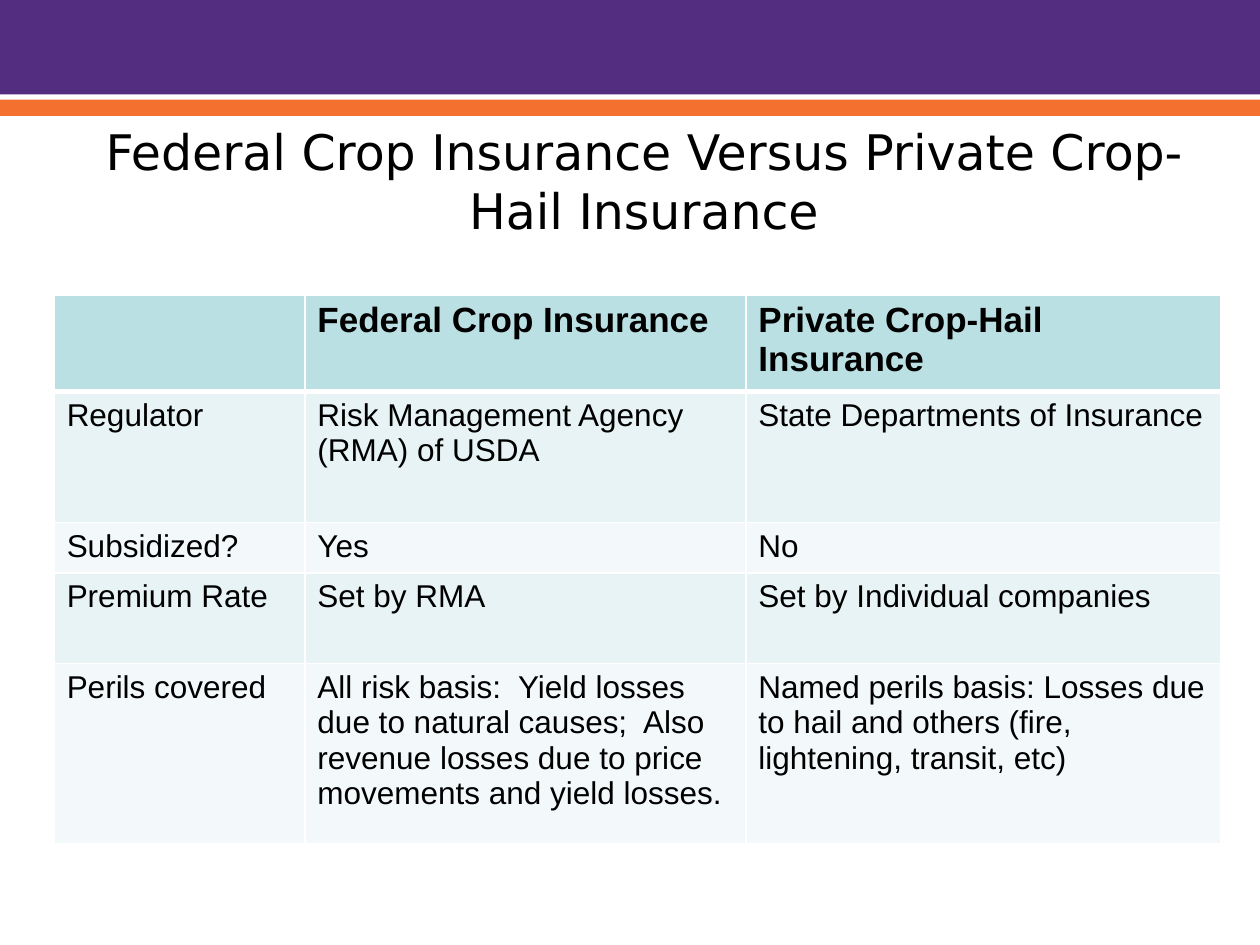
from lxml import etree
from pptx import Presentation
from pptx.dml.color import RGBColor
from pptx.enum.shapes import MSO_SHAPE
from pptx.enum.text import MSO_ANCHOR, PP_ALIGN
from pptx.oxml.ns import qn
from pptx.util import Inches, Pt

TITLE = "Federal Crop Insurance Versus Private Crop-Hail Insurance"
ROWS = [
    ("", "Federal Crop Insurance", "Private Crop-Hail Insurance"),
    ("Regulator", "Risk Management Agency (RMA) of USDA",
     "State Departments of Insurance"),
    ("Subsidized?", "Yes", "No"),
    ("Premium Rate", "Set by RMA", "Set by Individual companies"),
    ("Perils covered",
     "All risk basis:  Yield losses due to natural causes;  Also revenue "
     "losses due to price movements and yield losses.",
     "Named perils basis: Losses due to hail and others (fire, lightening, "
     "transit, etc)"),
]
COL_WIDTHS = [1.99, 3.5, 3.77]
ROW_HEIGHTS = [0.71, 1.04, 0.4, 0.72, 1.43]

THEME = {
    "purple": "522D80", "orange": "F4702F", "text": "000000",
    "header": "BBE0E3", "bands": ("E7F3F4", "F3F9FA"), "rule": "FFFFFF",
    "title_font": "DejaVu Sans", "body_font": "Arial",
    "title_size": 28, "header_size": 20, "body_size": 18,
}
BANNER = [(0, 0.75, THEME["purple"]), (0.79, 0.13, THEME["orange"])]


def add_run(p, text, font, size, bold=False):
    r = p.add_run()
    r.text = text
    r.font.name = font
    r.font.size = Pt(size)
    r.font.bold = bold
    r.font.color.rgb = RGBColor.from_string(THEME["text"])


def add_band(s, top, height, color):
    sp = s.shapes.add_shape(MSO_SHAPE.RECTANGLE, 0, Inches(top),
                            Inches(10), Inches(height))
    sp.shadow.inherit = False
    sp.fill.solid()
    sp.fill.fore_color.rgb = RGBColor.from_string(color)
    sp.line.fill.background()


def add_title(s):
    sp = s.shapes.add_textbox(Inches(0.65), Inches(0.81),
                              Inches(8.92), Inches(1.25))
    tf = sp.text_frame
    tf.word_wrap = True
    tf.vertical_anchor = MSO_ANCHOR.MIDDLE
    p = tf.paragraphs[0]
    p.alignment = PP_ALIGN.CENTER
    add_run(p, TITLE, THEME["title_font"], THEME["title_size"])


def set_borders(cell, widths):
    """Draw the left, right, top and bottom rules, ahead of the cell's fill."""
    tcPr = cell._tc.get_or_add_tcPr()
    for i, (side, width) in enumerate(zip("LRTB", widths)):
        ln = etree.Element(qn(f"a:ln{side}"), w=str(Pt(width)))
        fill = etree.SubElement(ln, qn("a:solidFill"))
        etree.SubElement(fill, qn("a:srgbClr"), val=THEME["rule"])
        tcPr.insert(i, ln)


def add_comparison(s):
    frame = s.shapes.add_table(len(ROWS), len(COL_WIDTHS), Inches(0.43),
                               Inches(2.34), Inches(sum(COL_WIDTHS)),
                               Inches(sum(ROW_HEIGHTS)))
    table = frame.table
    for col, width in zip(table.columns, COL_WIDTHS):
        col.width = Inches(width)
    for i, (texts, height) in enumerate(zip(ROWS, ROW_HEIGHTS)):
        table.rows[i].height = Inches(height)
        header = i == 0
        color = THEME["header"] if header else THEME["bands"][(i - 1) % 2]
        size = THEME["header_size" if header else "body_size"]
        for j, text in enumerate(texts):
            cell = table.cell(i, j)
            cell.fill.solid()
            cell.fill.fore_color.rgb = RGBColor.from_string(color)
            set_borders(cell, (1, 1, 3 if i == 1 else 1, 3 if header else 1))
            if text:
                add_run(cell.text_frame.paragraphs[0], text,
                        THEME["body_font"], size, header)


def main():
    prs = Presentation()
    prs.slide_width, prs.slide_height = Inches(10), Inches(7.5)
    s = prs.slides.add_slide(prs.slide_layouts[6])
    for band in BANNER:
        add_band(s, *band)
    add_title(s)
    add_comparison(s)
    prs.save("out.pptx")


if __name__ == "__main__":
    main()
